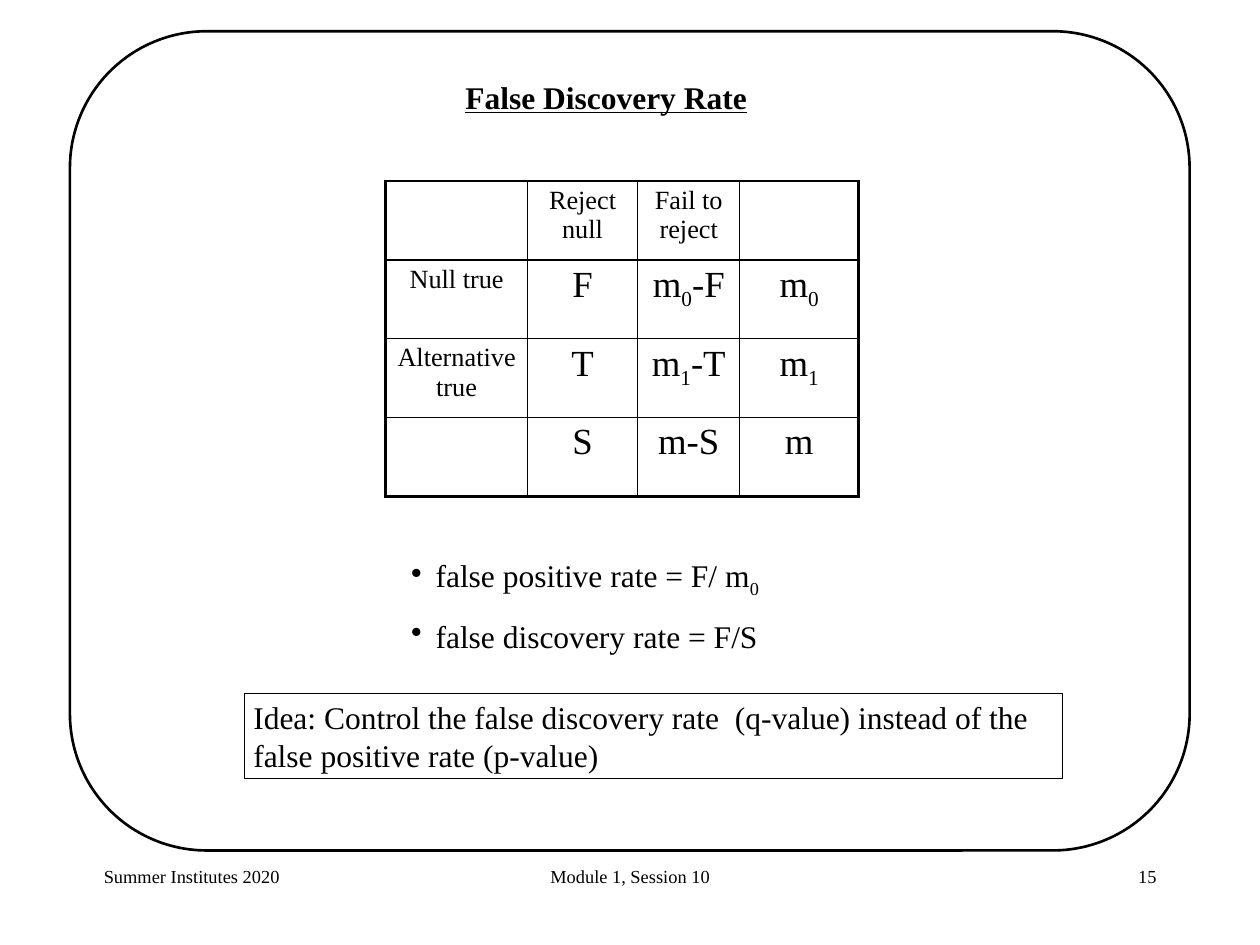
import dataclasses
import typing

import lxml.etree
import pptx
import pptx.dml.color
import pptx.enum.shapes
import pptx.enum.text
import pptx.oxml.ns
import pptx.util

Cm = pptx.util.Cm
Pt = pptx.util.Pt
ALIGN = pptx.enum.text.PP_ALIGN
KIND = pptx.enum.shapes.MSO_SHAPE
FONT = "Times New Roman"
INK = {"line": "000000", "text": "000000"}

# Pieces of a text: every second one is a subscript
Parts = tuple[str, ...]


@dataclasses.dataclass
class Note:
    left: float
    top: float
    width: float
    height: float
    lines: list[Parts]
    size: float = 24
    align: typing.Any = ALIGN.LEFT
    title: bool = False
    dots: bool = False


def color(name: str) -> pptx.dml.color.RGBColor:
    return pptx.dml.color.RGBColor.from_string(INK[name])


def tag(parent, name: str, **attrs: str):
    node = lxml.etree.SubElement(parent, pptx.oxml.ns.qn(name))
    for key, value in attrs.items():
        node.set(key, value)
    return node


def write(para, parts: Parts, size: float, title: bool = False) -> None:
    """Add the text run by run."""
    for index, part in enumerate(parts):
        run = para.add_run()
        run.text = part
        font = run.font
        font.name, font.size = FONT, Pt(size)
        font.color.rgb = color("text")
        if title:
            font.bold = font.underline = True
        if index % 2:
            run._r.get_or_add_rPr().set("baseline", "-25000")


def bullet(para) -> None:
    props = para._p.get_or_add_pPr()
    props.set("marL", str(Cm(0.66)))
    props.set("indent", str(-Cm(0.66)))
    tag(props, "a:buChar", char="•")


def fill(frame, note: Note) -> None:
    """Put the lines of a note into a text frame."""
    frame.word_wrap = True
    for index, parts in enumerate(note.lines):
        para = frame.add_paragraph() if index else frame.paragraphs[0]
        para.alignment = note.align
        if index:
            para.space_before = Pt(14)
        if note.dots:
            bullet(para)
        write(para, parts, note.size, note.title)


def label(slide, note: Note) -> None:
    box = slide.shapes.add_textbox(
        Cm(note.left), Cm(note.top), Cm(note.width), Cm(note.height))
    fill(box.text_frame, note)


def outline(slide, kind, left: float, top: float, width: float,
            height: float, weight: float):
    shape = slide.shapes.add_shape(
        kind, Cm(left), Cm(top), Cm(width), Cm(height))
    shape.shadow.inherit = False
    shape.fill.background()
    shape.line.color.rgb = color("line")
    shape.line.width = Pt(weight)
    return shape


def border(cell, outer: dict[str, bool]) -> None:
    """Thick lines on the outer sides, thin ones inside."""
    props = cell._tc.get_or_add_tcPr()
    for side, thick in outer.items():
        line = tag(props, "a:ln" + side, w=str(Pt(2.25 if thick else 1)))
        tag(tag(line, "a:solidFill"), "a:srgbClr", val=INK["line"])
    cell.fill.background()


def grid(slide, rows: list[list[Parts]], widths: list[float]) -> None:
    count, span = len(rows), len(widths)
    table = slide.shapes.add_table(
        count, span, Cm(10.37), Cm(4.87), Cm(sum(widths)), Cm(8.47)).table
    table.first_row = table.horz_banding = False
    for col, width in zip(table.columns, widths):
        col.width = Cm(width)
    for y, row in enumerate(rows):
        for x, parts in enumerate(row):
            cell = table.cell(y, x)
            para = cell.text_frame.paragraphs[0]
            para.alignment = ALIGN.CENTER
            write(para, parts, 28 if x and y else 20)
            border(cell, {"L": x == 0, "R": x == span - 1,
                          "T": y == 0, "B": y == count - 1})


def main() -> None:
    deck = pptx.Presentation()
    deck.slide_width, deck.slide_height = Cm(33.87), Cm(25.4)
    slide = deck.slides.add_slide(deck.slide_layouts[6])

    # Frame
    frame = outline(slide, KIND.ROUNDED_RECTANGLE, 1.88, 0.84, 30.1, 22.02, 2)
    frame.adjustments[0] = 0.167

    # Title
    label(slide, Note(11.43, 1.96, 9.73, 1.27, [("False Discovery Rate",)],
                      align=ALIGN.CENTER, title=True))

    # Table of outcomes
    grid(slide, [
        [(), ("Reject null",), ("Fail to reject",), ()],
        [("Null true",), ("F",), ("m", "0", "-F"), ("m", "0")],
        [("Alternative true",), ("T",), ("m", "1", "-T"), ("m", "1")],
        [(), ("S",), ("m-S",), ("m",)],
    ], [3.81, 2.96, 2.75, 3.18])

    # Rates
    label(slide, Note(10.8, 14.82, 11.86, 2.82, [
        ("false positive rate = F/ m", "0"),
        ("false discovery rate = F/S",)], dots=True))

    # Idea
    idea = Note(6.56, 18.63, 22.01, 2.3, [
        ("Idea: Control the false discovery rate  (q-value) "
         "instead of the false positive rate (p-value)",)])
    box = outline(slide, KIND.RECTANGLE, idea.left, idea.top,
                  idea.width, idea.height, 0.75)
    fill(box.text_frame, idea)

    # Footer
    for left, width, align, text in (
            (2.54, 7.06, ALIGN.LEFT, "Summer Institutes 2020"),
            (11.58, 10.72, ALIGN.CENTER, "Module 1, Session 10"),
            (24.28, 7.06, ALIGN.RIGHT, "15")):
        label(slide, Note(left, 23.14, width, 1.7, [(text,)], 14, align))

    deck.save("out.pptx")


if __name__ == "__main__":
    main()
